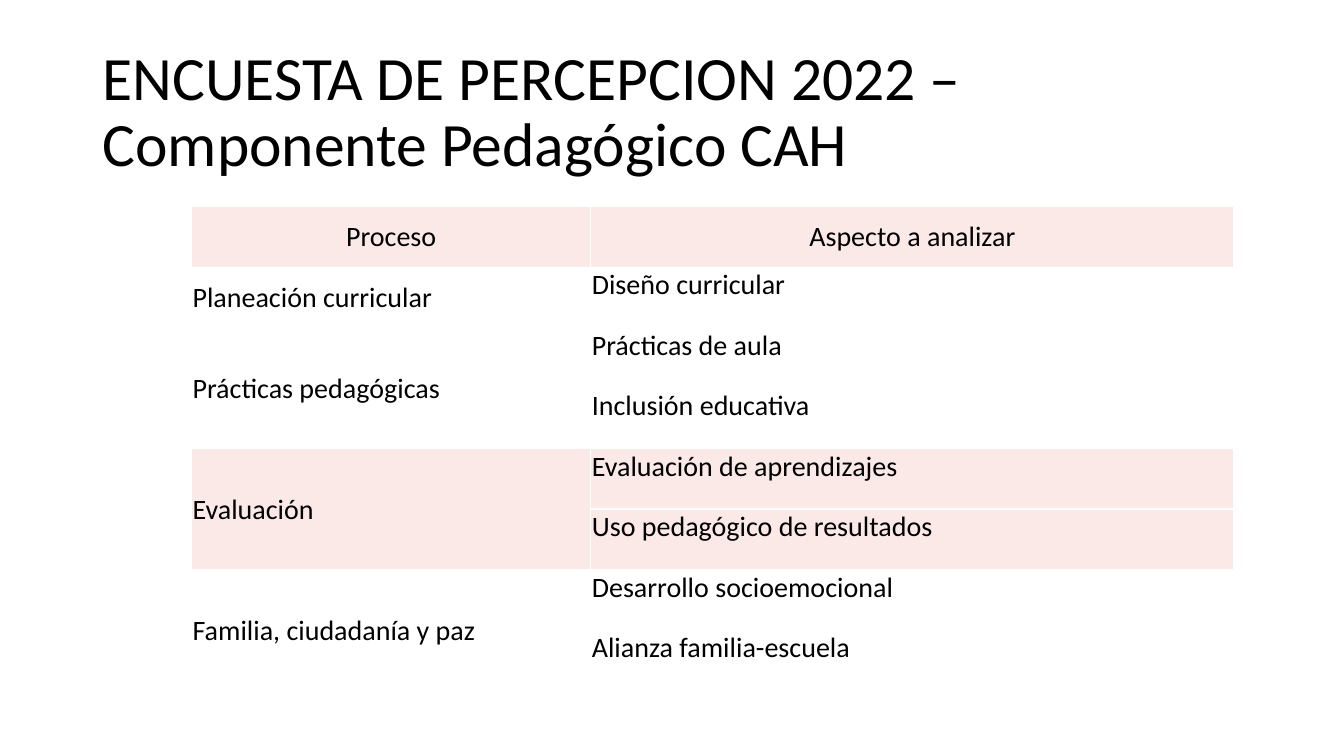
from lxml import etree
from pptx import Presentation
from pptx.dml.color import RGBColor
from pptx.enum import text
from pptx.oxml import ns
from pptx.util import Inches, Pt

TITLE = "ENCUESTA DE PERCEPCION 2022 – Componente Pedagógico CAH"
HEADERS = ["Proceso", "Aspecto a analizar"]
# process, aspects, shaded
PROCESSES = [
    ("Planeación curricular", ["Diseño curricular"], False),
    ("Prácticas pedagógicas", ["Prácticas de aula", "Inclusión educativa"], False),
    ("Evaluación", ["Evaluación de aprendizajes", "Uso pedagógico de resultados"], True),
    ("Familia, ciudadanía y paz", ["Desarrollo socioemocional", "Alianza familia-escuela"], False),
]
FONT, BLACK, WHITE, PINK = "Calibri", "000000", "FFFFFF", "FBE9E8"
COL_WIDTHS = [3.96, 6.38]
ROW_HEIGHT = 0.6
LEFT, MIDDLE = text.PP_ALIGN.LEFT, text.MSO_ANCHOR.MIDDLE
CENTER, JUSTIFY = text.PP_ALIGN.CENTER, text.PP_ALIGN.JUSTIFY
TOP = text.MSO_ANCHOR.TOP


def color(value):
    return RGBColor.from_string(value)


def add_run(p, words, size):
    r = p.add_run()
    r.text = words
    r.font.name, r.font.size = FONT, Pt(size)
    r.font.color.rgb = color(BLACK)


def style_cell(cell, shaded):
    """Set the insets, white borders and fill of a cell."""
    cell.margin_left = cell.margin_right = cell.margin_top = Inches(0.01)
    cell.margin_bottom = 0
    tc_pr = cell._tc.get_or_add_tcPr()
    for side in ("a:lnL", "a:lnR", "a:lnT", "a:lnB"):
        ln = etree.SubElement(tc_pr, ns.qn(side), w=str(Pt(1)))
        fill = etree.SubElement(ln, ns.qn("a:solidFill"))
        etree.SubElement(fill, ns.qn("a:srgbClr"), val=WHITE)
    if shaded:
        cell.fill.solid()
        cell.fill.fore_color.rgb = color(PINK)
    else:
        cell.fill.background()


def write_cell(cell, words, align, anchor):
    cell.vertical_anchor = anchor
    p = cell.text_frame.paragraphs[0]
    p.alignment = align
    add_run(p, words, 20)


prs = Presentation()
prs.slide_width, prs.slide_height = Inches(13.33), Inches(7.5)
s = prs.slides.add_slide(prs.slide_layouts[6])

tf = s.shapes.add_textbox(Inches(0.92), Inches(0.4), Inches(11.5), Inches(1.45)).text_frame
tf.word_wrap = True
tf.vertical_anchor = MIDDLE
p = tf.paragraphs[0]
p.line_spacing = 0.9
add_run(p, TITLE, 44)

shading = [True] + [shaded for _, aspects, shaded in PROCESSES for _ in aspects]
table = s.shapes.add_table(
    len(shading), len(COL_WIDTHS), Inches(1.9), Inches(2.05),
    Inches(sum(COL_WIDTHS)), Inches(ROW_HEIGHT * len(shading))).table
table.horz_banding = table.first_row = False
for column, width in zip(table.columns, COL_WIDTHS):
    column.width = Inches(width)
for i, shaded in enumerate(shading):
    for j in range(len(COL_WIDTHS)):
        style_cell(table.cell(i, j), shaded)

for j, header in enumerate(HEADERS):
    write_cell(table.cell(0, j), header, CENTER, MIDDLE)
row = 1
for process, aspects, _ in PROCESSES:
    cell = table.cell(row, 0)
    if len(aspects) > 1:
        cell.merge(table.cell(row + len(aspects) - 1, 0))
    write_cell(cell, process, LEFT, MIDDLE)
    for aspect in aspects:
        write_cell(table.cell(row, 1), aspect, JUSTIFY, TOP)
        row += 1

prs.save("out.pptx")
